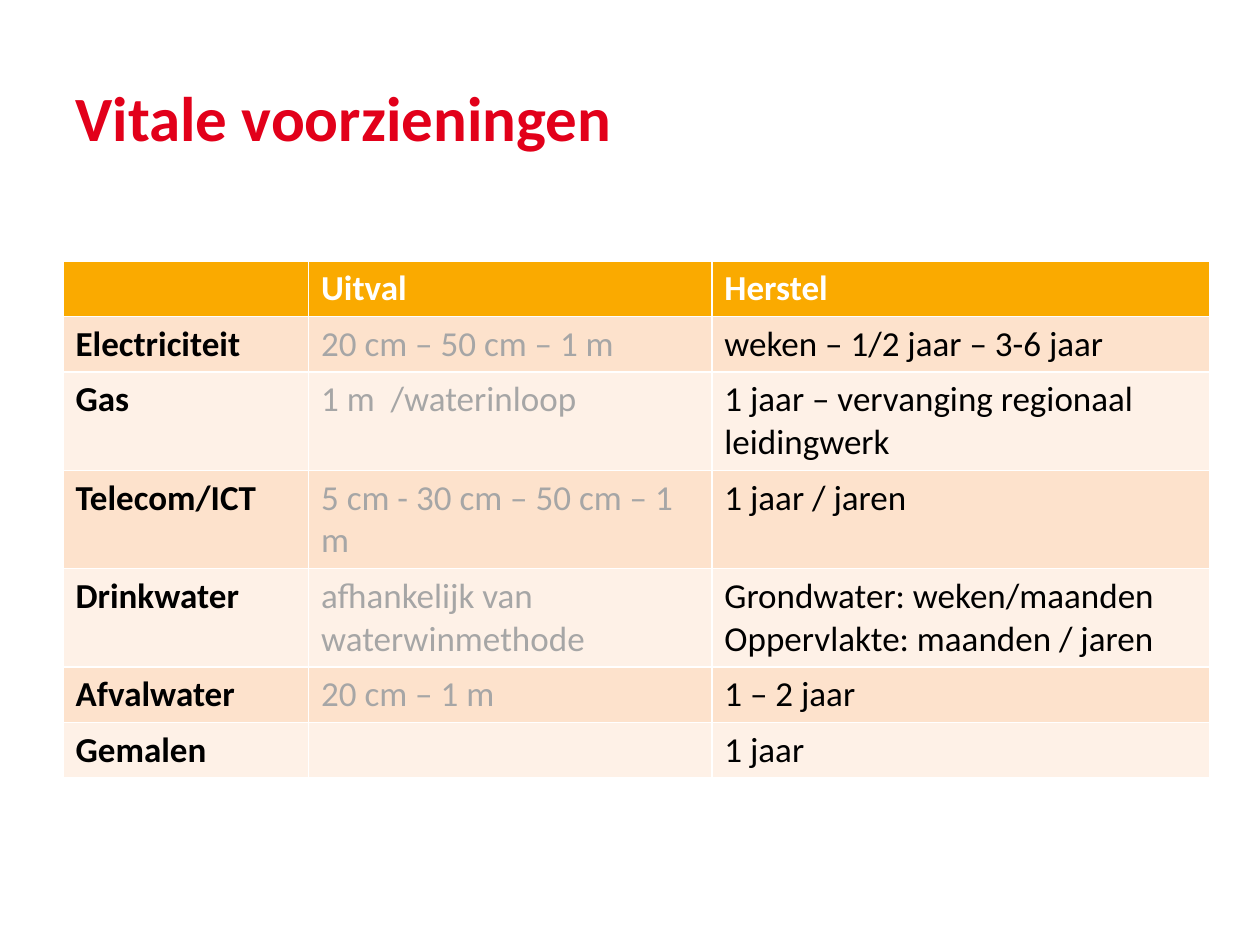
from pptx import Presentation
from pptx.dml.color import RGBColor
from pptx.enum.text import MSO_ANCHOR, PP_ALIGN
from pptx.util import Cm, Pt

LEFT = PP_ALIGN.LEFT
MIDDLE = MSO_ANCHOR.MIDDLE

RED = RGBColor(0xE2, 0x00, 0x1A)
ORANGE = RGBColor(0xFA, 0xAA, 0x00)
PEACH = RGBColor(0xFD, 0xE2, 0xCC)
CREAM = RGBColor(0xFE, 0xF1, 0xE7)
WHITE = RGBColor(0xFF, 0xFF, 0xFF)
GREY = RGBColor(0xA6, 0xA6, 0xA6)
BLACK = RGBColor(0x00, 0x00, 0x00)

WIDTHS = (4.95, 8.13, 10.03)
LOW, HIGH = 1.1, 1.96
HEIGHTS = (LOW, LOW, HIGH, HIGH, HIGH, LOW, LOW)
ROWS = (
    ("", "Uitval", "Herstel"),
    ("Electriciteit", "20 cm – 50 cm – 1 m", "weken – 1/2 jaar – 3-6 jaar"),
    ("Gas", "1 m  /waterinloop", "1 jaar – vervanging regionaal leidingwerk"),
    ("Telecom/ICT", "5 cm - 30 cm – 50 cm – 1 m", "1 jaar / jaren"),
    ("Drinkwater", "afhankelijk van waterwinmethode",
     "Grondwater: weken/maanden\nOppervlakte: maanden / jaren"),
    ("Afvalwater", "20 cm – 1 m", "1 – 2 jaar"),
    ("Gemalen", "", "1 jaar"),
)


class Page:
    face = "Calibri"

    def __init__(self, deck):
        self.slide = deck.slides.add_slide(deck.slide_layouts[5])

    def label(self, frame, text, size, color, bold):
        frame.text = text
        for para in frame.paragraphs:
            para.alignment = LEFT
            font = para.font
            font.name, font.size, font.bold = self.face, Pt(size), bold
            font.color.rgb = color

    def title(self, text, left, top, width, height):
        box = self.slide.shapes.title
        box.left, box.top = Cm(left), Cm(top)
        box.width, box.height = Cm(width), Cm(height)
        frame = box.text_frame
        frame.word_wrap = True
        frame.vertical_anchor = MIDDLE
        self.label(frame, text, 36, RED, True)

    def table(self, rows, left, top, widths, heights):
        """Add a table with a header row, a bold first column and bands."""
        grid = self.slide.shapes.add_table(
            len(rows), len(widths), Cm(left), Cm(top),
            Cm(sum(widths)), Cm(sum(heights))).table
        for col, width in zip(grid.columns, widths):
            col.width = Cm(width)
        for r, (row, height) in enumerate(zip(rows, heights)):
            grid.rows[r].height = Cm(height)
            head = r == 0
            fill = ORANGE if head else PEACH if r % 2 else CREAM
            for c, text in enumerate(row):
                cell = grid.cell(r, c)
                cell.fill.solid()
                cell.fill.fore_color.rgb = fill
                color = WHITE if head else GREY if c == 1 else BLACK
                self.label(cell.text_frame, text, 20, color, head or c == 0)


def main():
    deck = Presentation()
    deck.slide_width, deck.slide_height = Cm(25.4), Cm(19.05)
    page = Page(deck)
    page.title("Vitale voorzieningen", 1.27, 0.76, 22.86, 3.18)
    page.table(ROWS, 1.27, 5.26, WIDTHS, HEIGHTS)
    deck.save("out.pptx")


if __name__ == "__main__":
    main()
